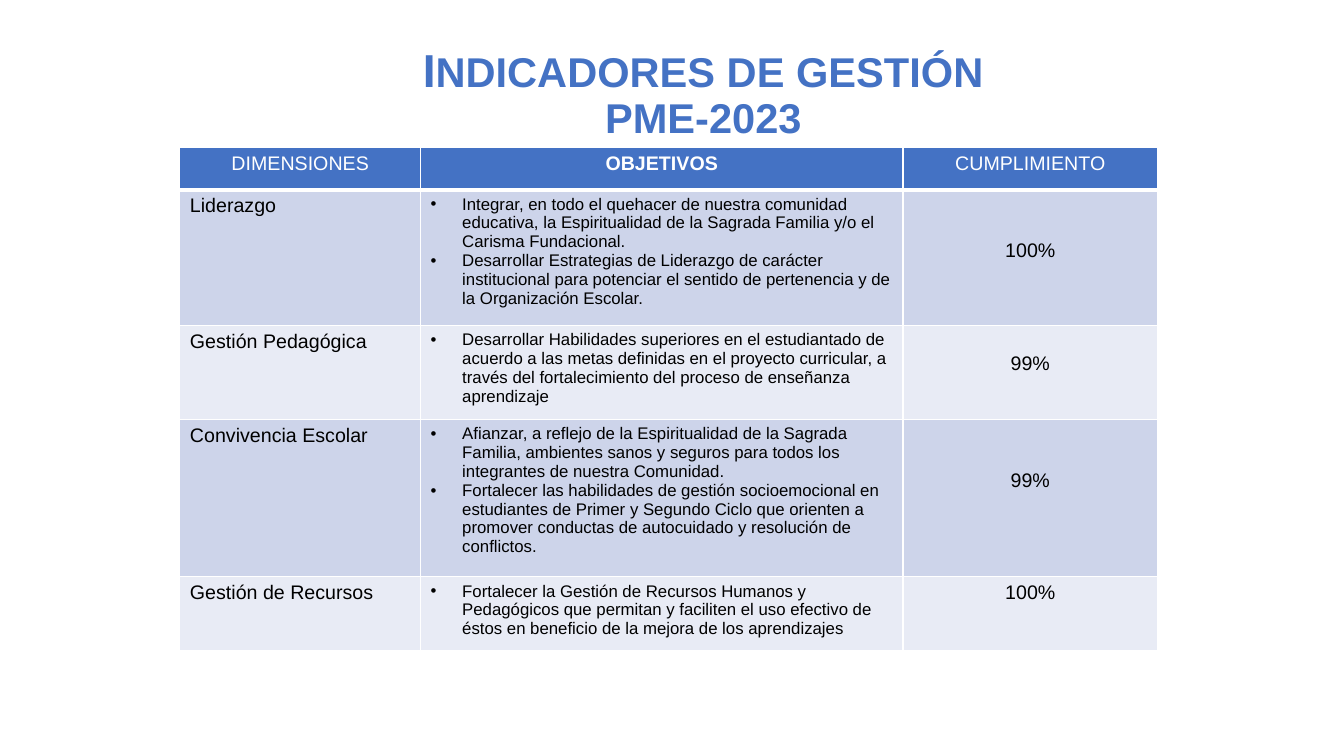
from lxml import etree
from pptx import Presentation
from pptx.dml.color import RGBColor
from pptx.enum.text import MSO_ANCHOR, MSO_AUTO_SIZE, PP_ALIGN
from pptx.oxml.ns import qn
from pptx.util import Pt

CENTER, LEFT = PP_ALIGN.CENTER, PP_ALIGN.LEFT
BOTTOM, TOP = MSO_ANCHOR.BOTTOM, MSO_ANCHOR.TOP
NO_AUTOFIT = MSO_AUTO_SIZE.NONE
TITLE_ONLY = 5
FONT = "Arial"
COLORS = {
    "blue": "4472C4",
    "white": "FFFFFF",
    "black": "000000",
    "band_dark": "CDD4EA",
    "band_light": "E8EBF5",
}
LABEL_SIZE, GOAL_SIZE = 14, 12
LABEL_LINE = 16.1
CELL_TOP = 3.6
GOAL_INDENT = 22.5

HEADERS = [("DIMENSIONES", False), ("OBJETIVOS", True), ("CUMPLIMIENTO", False)]
DIMENSIONS = [
    ("Liderazgo", [
        "Integrar, en todo el quehacer de nuestra comunidad educativa, la "
        "Espiritualidad de la Sagrada Familia y/o el Carisma Fundacional.",
        "Desarrollar Estrategias de Liderazgo de carácter institucional para "
        "potenciar el sentido de pertenencia y de la Organización Escolar.",
    ], "100%", 2),
    ("Gestión Pedagógica", [
        "Desarrollar Habilidades superiores en el estudiantado de acuerdo a las "
        "metas definidas en el proyecto curricular, a través del fortalecimiento "
        "del proceso de enseñanza aprendizaje",
    ], "99%", 1),
    ("Convivencia Escolar", [
        "Afianzar, a reflejo de la Espiritualidad de la Sagrada Familia, ambientes "
        "sanos y seguros para todos los integrantes de nuestra Comunidad.",
        "Fortalecer las habilidades de gestión socioemocional en estudiantes de "
        "Primer y Segundo Ciclo que orienten a promover conductas de autocuidado "
        "y resolución de conflictos.",
    ], "99%", 2),
    ("Gestión de Recursos", [
        "Fortalecer la Gestión de Recursos Humanos y Pedagógicos que permitan y "
        "faciliten el uso efectivo de éstos en beneficio de la mejora de los "
        "aprendizajes",
    ], "100%", 0),
]


def rgb(name):
    return RGBColor.from_string(COLORS[name])


def add_span(para, text, size=LABEL_SIZE, color="black", bold=False):
    span = para.add_run()
    span.text = text
    span.font.name = FONT
    span.font.size = Pt(size)
    span.font.bold = bold
    span.font.color.rgb = rgb(color)


def add_bullet(para):
    properties = para._p.get_or_add_pPr()
    properties.set("marL", str(Pt(GOAL_INDENT)))
    properties.set("indent", str(-Pt(GOAL_INDENT)))
    color = etree.SubElement(properties, qn("a:buClr"))
    etree.SubElement(color, qn("a:srgbClr"), val=COLORS["black"])
    etree.SubElement(properties, qn("a:buFont"), typeface=FONT)
    etree.SubElement(properties, qn("a:buChar"), char="•")


def set_borders(cell, top=1, bottom=1):
    properties = cell._tc.get_or_add_tcPr()
    for side, width in (("L", 1), ("R", 1), ("T", top), ("B", bottom)):
        line = etree.SubElement(properties, qn("a:ln" + side), w=str(Pt(width)))
        fill = etree.SubElement(line, qn("a:solidFill"))
        etree.SubElement(fill, qn("a:srgbClr"), val=COLORS["white"])


class IndicatorSlide:
    def __init__(self, deck):
        self.page = deck.slides.add_slide(deck.slide_layouts[TITLE_ONLY])

    def title(self, initial, first_line, second_line, left, top, width, height):
        box = self.page.shapes.title
        box.left, box.top, box.width, box.height = map(Pt, (left, top, width, height))
        frame = box.text_frame
        frame.auto_size = NO_AUTOFIT
        frame.word_wrap = True
        frame.vertical_anchor = BOTTOM
        para = frame.paragraphs[0]
        para.alignment = CENTER
        para.line_spacing = 0.9
        add_span(para, initial, size=33, color="blue", bold=True)
        add_span(para, first_line, size=29.7, color="blue", bold=True)
        para.add_line_break()
        etree.SubElement(para._p[-1], qn("a:rPr"), sz="2970")
        add_span(para, second_line, size=29.7, color="blue", bold=True)

    def table(self, left, top, widths, heights):
        frame = self.page.shapes.add_table(
            len(heights), len(widths), Pt(left), Pt(top),
            Pt(sum(widths)), Pt(sum(heights)))
        grid = frame.table
        for column, width in zip(grid.columns, widths):
            column.width = Pt(width)
        for row, height in zip(grid.rows, heights):
            row.height = Pt(height)
        return grid

    def cell(self, cell, texts, fill, align=LEFT, bullets=False, skipped_lines=0,
             top_border=1, bottom_border=1, **style):
        set_borders(cell, top_border, bottom_border)
        cell.fill.solid()
        cell.fill.fore_color.rgb = rgb(fill)
        cell.vertical_anchor = TOP
        cell.margin_top = Pt(CELL_TOP + skipped_lines * LABEL_LINE)
        frame = cell.text_frame
        for index, text in enumerate(texts):
            para = frame.add_paragraph() if index else frame.paragraphs[0]
            if bullets:
                add_bullet(para)
            para.alignment = align
            add_span(para, text, **style)


def main():
    deck = Presentation()
    deck.slide_width, deck.slide_height = Pt(960), Pt(540)
    slide = IndicatorSlide(deck)
    slide.title("I", "NDICADORES DE GESTIÓN", "PME-2023", 178.5, 12.2, 648, 93)
    grid = slide.table(128.5, 105.5, [172, 344.5, 182], [30, 97, 67.2, 112.3, 52.8])
    for column, (header, bold) in enumerate(HEADERS):
        slide.cell(grid.cell(0, column), [header], "blue", align=CENTER,
                   bottom_border=3, color="white", bold=bold)
    for row, (name, goals, result, skipped) in enumerate(DIMENSIONS, start=1):
        fill = "band_dark" if row % 2 else "band_light"
        top_border = 3 if row == 1 else 1
        slide.cell(grid.cell(row, 0), [name], fill, top_border=top_border)
        slide.cell(grid.cell(row, 1), goals, fill, bullets=True,
                   top_border=top_border, size=GOAL_SIZE)
        slide.cell(grid.cell(row, 2), [result], fill, align=CENTER,
                   skipped_lines=skipped, top_border=top_border)
    deck.save("out.pptx")


if __name__ == "__main__":
    main()
